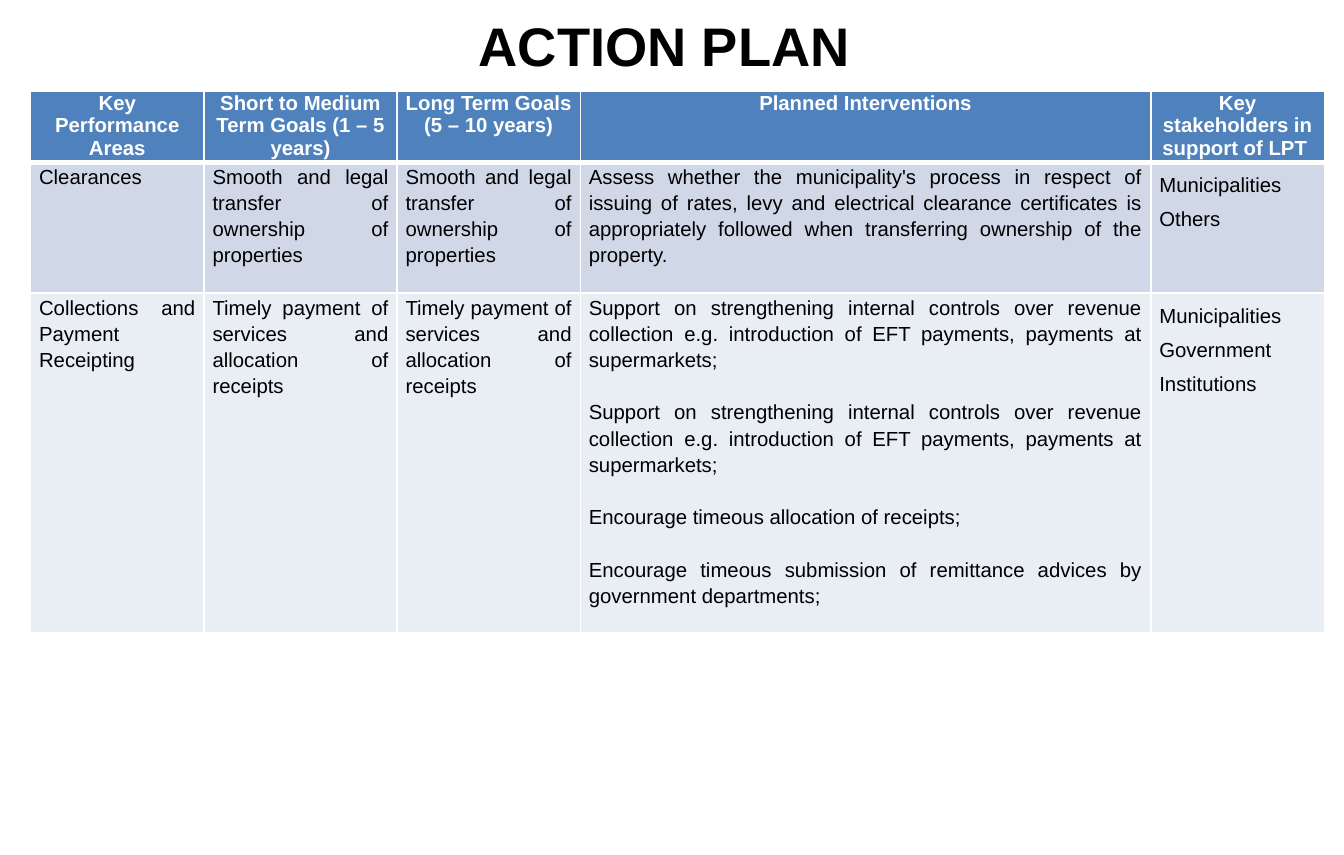
from pptx import Presentation
from pptx.dml.color import RGBColor
from pptx.enum.text import MSO_ANCHOR, PP_ALIGN as Align
from pptx.oxml import parse_xml
from pptx.oxml.ns import nsdecls
from pptx.util import Inches, Pt

TITLE = "ACTION PLAN "
HEADS = [
    "Key Performance Areas",
    "Short to Medium Term Goals (1 – 5 years)",
    "Long Term Goals (5 – 10 years)",
    "Planned Interventions",
    "Key stakeholders in support of LPT ",
]
SMOOTH = "Smooth and legal transfer of ownership of properties"
TIMELY = "Timely payment of services and allocation of receipts"
SUPPORT = ("Support on strengthening internal controls over revenue collection "
           "e.g. introduction of EFT payments, payments at supermarkets;")
PLANS = [
    [
        ["Clearances"],
        [SMOOTH],
        [SMOOTH],
        ["Assess whether the municipality's process in respect of issuing of "
         "rates, levy and electrical clearance certificates is appropriately "
         "followed when transferring ownership of the property."],
        ["Municipalities", "Others"],
    ],
    [
        ["Collections and Payment Receipting"],
        [TIMELY],
        [TIMELY],
        [SUPPORT, SUPPORT,
         "Encourage timeous allocation of receipts;",
         "Encourage timeous submission of remittance advices by government "
         "departments;"],
        ["Municipalities", "Government Institutions"],
    ],
]
ROWS = [[[head] for head in HEADS], *PLANS]

COLORS = {"head": "4F81BD", "odd": "D0D8E8", "even": "E9EDF4",
          "white": "FFFFFF", "black": "000000"}
FILLS = ["head", "odd", "even"]
WIDE, HIGH = 11, 7
COLS = [1.42, 1.58, 1.5, 4.67, 1.42]
TALL = [0.58, 1.07, 2.78]
LEFT, TOP = 0.25, 0.75
LAST = len(COLS) - 1


def rgb(name):
    return RGBColor.from_string(COLORS[name])


def write(frame, lines, size=12, color="black", bold=False,
          align=Align.JUSTIFY, pitch=1.0, gap=0):
    for i, line in enumerate(lines):
        para = frame.paragraphs[0] if i == 0 else frame.add_paragraph()
        para.alignment, para.line_spacing = align, pitch
        para.space_before = Pt(gap if i else 0)
        run = para.add_run()
        run.text = line
        font = run.font
        font.name, font.size, font.bold = "Arial", Pt(size), bold
        font.color.rgb = rgb(color)


def edge(cell, top, bottom):
    """Give a cell white borders; top and bottom are widths in points."""
    props = cell._tc.get_or_add_tcPr()
    for side, width in zip("LRTB", (1, 1, top, bottom)):
        props.append(parse_xml(
            f'<a:ln{side} {nsdecls("a")} w="{Pt(width)}"><a:solidFill>'
            f'<a:srgbClr val="{COLORS["white"]}"/></a:solidFill></a:ln{side}>'))


def main():
    deck = Presentation()
    deck.slide_width, deck.slide_height = Inches(WIDE), Inches(HIGH)
    slide = deck.slides.add_slide(deck.slide_layouts[5])

    title = slide.shapes.title
    title.left, title.top = Inches(WIDE * 0.05), Inches(0.08)
    title.width, title.height = Inches(WIDE * 0.9), Inches(0.58)
    title.text_frame.vertical_anchor = MSO_ANCHOR.MIDDLE
    write(title.text_frame, [TITLE], size=32, bold=True, align=Align.CENTER)

    table = slide.shapes.add_table(
        len(ROWS), len(COLS), Inches(LEFT), Inches(TOP),
        Inches(sum(COLS)), Inches(sum(TALL))).table
    for col, width in zip(table.columns, COLS):
        col.width = Inches(width)
    for r, (row, tall) in enumerate(zip(ROWS, TALL)):
        table.rows[r].height = Inches(tall)
        for c, lines in enumerate(row):
            cell = table.cell(r, c)
            cell.margin_left = cell.margin_right = Inches(0.07)
            cell.margin_top = cell.margin_bottom = 0
            edge(cell, top=3 if r == 1 else 1, bottom=3 if r == 0 else 1)
            cell.fill.solid()
            cell.fill.fore_color.rgb = rgb(FILLS[r])
            if r == 0:
                write(cell.text_frame, lines, color="white", bold=True,
                      align=Align.CENTER)
            elif c == LAST:
                write(cell.text_frame, lines, pitch=1.5)
            else:
                write(cell.text_frame, lines, pitch=1.15, gap=15.5)

    deck.save("out.pptx")


if __name__ == "__main__":
    main()
